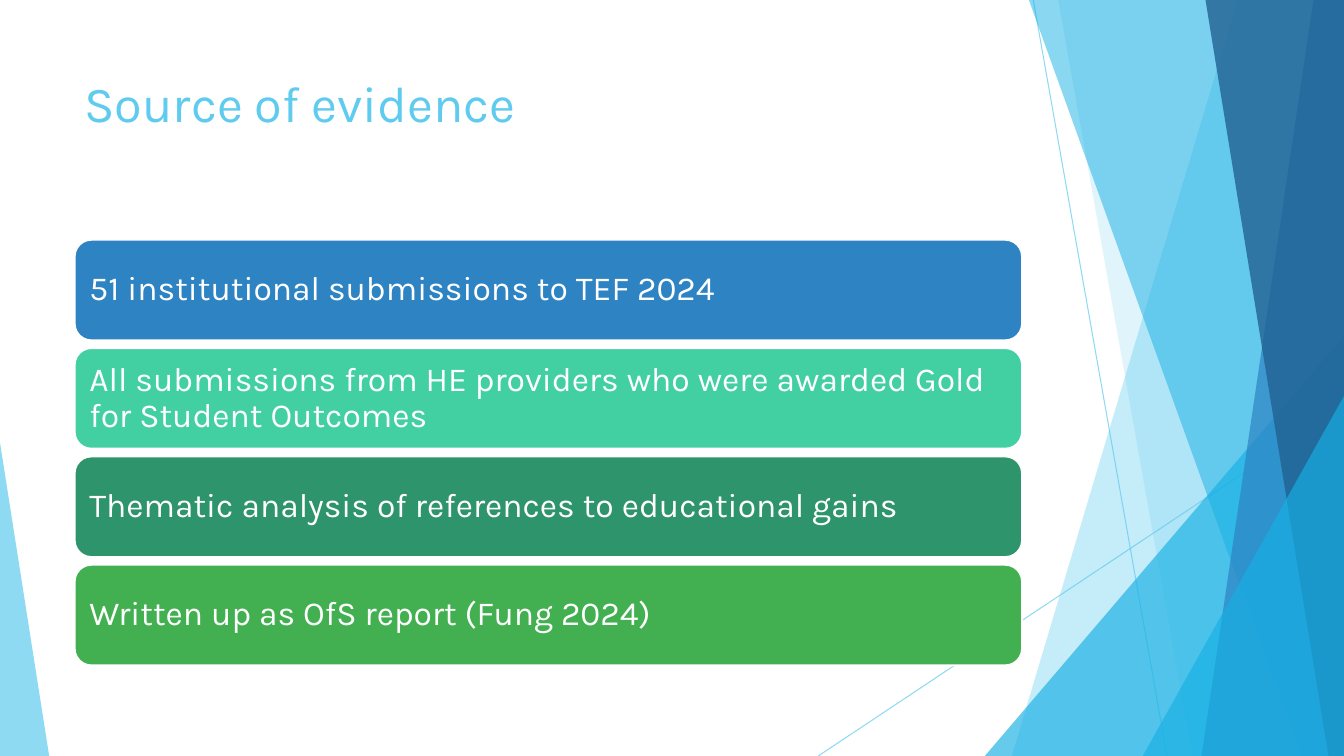
from lxml import etree
from pptx import Presentation
from pptx import util as u
from pptx.dml.color import RGBColor
from pptx.enum import shapes, text
from pptx.oxml.ns import qn

FONT = "Karla"
WHITE = RGBColor(0xFF, 0xFF, 0xFF)
SKY = RGBColor(0x5F, 0xCB, 0xEF)
CYAN = RGBColor(0x17, 0xB0, 0xE4)
BLUE = RGBColor(0x2E, 0x83, 0xC3)
NAVY = RGBColor(0x22, 0x62, 0x92)
MINT = RGBColor(0x42, 0xD0, 0xA2)
TEAL = RGBColor(0x2E, 0x94, 0x6B)
GREEN = RGBColor(0x42, 0xB0, 0x51)

SLIDE_WIDTH, SLIDE_HEIGHT = u.Cm(33.87), u.Cm(19.05)

EVIDENCE = [
    ("51 institutional submissions to TEF 2024", BLUE),
    ("All submissions from HE providers who were awarded Gold for Student Outcomes", MINT),
    ("Thematic analysis of references to educational gains", TEAL),
    ("Written up as OfS report (Fung 2024)", GREEN),
]


def set_opacity(color_parent, percent):
    color = next(color_parent.iter(qn("a:srgbClr")))
    etree.SubElement(color, qn("a:alpha"), val=str(percent * 1000))


def paint_facet(facet, color, opacity):
    facet.shadow.inherit = False
    facet.fill.solid()
    facet.fill.fore_color.rgb = color
    facet.line.fill.background()
    set_opacity(facet._element.spPr, opacity)


def add_thin_line(slide, x1, y1, x2, y2):
    thin = slide.shapes.add_connector(shapes.MSO_CONNECTOR.STRAIGHT, x1, y1, x2, y2)
    thin.line.color.rgb = SKY
    thin.line.width = u.Pt(0.75)
    set_opacity(thin._element.spPr, 70)
    etree.SubElement(thin._element.spPr, qn("a:effectLst"))


def add_band(slide, right, bottom, top_x, bottom_x, color, opacity):
    """Fill from a slanted left edge to the right side, over the full height."""
    outline = slide.shapes.build_freeform(top_x, 0, scale=1.0)
    outline.add_line_segments([(right, 0), (right, bottom), (bottom_x, bottom)], close=True)
    paint_facet(outline.convert_to_shape(), color, opacity)


def add_corner(slide, left, top, right, bottom, apex, color, opacity):
    """Triangle standing on the bottom edge, its apex at 0 (left) or 1 (right)."""
    corner = slide.shapes.add_shape(
        shapes.MSO_SHAPE.ISOSCELES_TRIANGLE, left, top, right - left, bottom - top)
    corner.adjustments[0] = apex
    paint_facet(corner, color, opacity)


def add_facets(slide, width, height):
    """Translucent facets along the right side and in the lower left corner."""
    add_thin_line(slide, u.Cm(26.04), 0, u.Cm(29.41), height)
    add_thin_line(slide, width, u.Cm(10.24), u.Cm(20.62), height)

    def band(top_x, bottom_x, color, opacity):
        add_band(slide, width, height, u.Cm(top_x), u.Cm(bottom_x), color, opacity)

    band(31.19, 25.5, SKY, 36)
    band(26.67, 30.05, SKY, 20)
    add_corner(slide, u.Cm(24.82), u.Cm(8.46), width, height, 1, CYAN, 66)
    band(25.93, 32.79, CYAN, 50)
    band(33.1, 30.28, BLUE, 70)
    band(30.38, 33.48, NAVY, 80)
    add_corner(slide, u.Cm(28.8), u.Cm(9.98), width, height, 1, CYAN, 66)
    add_corner(slide, 0, u.Cm(11.15), u.Cm(1.24), height, 0, SKY, 70)


def write(frame, words, size, color):
    frame.word_wrap = True
    line = frame.paragraphs[0]
    line.text = words
    line.alignment = text.PP_ALIGN.LEFT
    line.font.name = FONT
    line.font.size = u.Pt(size)
    line.font.color.rgb = color
    return line


def add_title(slide, left, top, width, height):
    title = slide.shapes.add_textbox(left, top, width, height)
    write(title.text_frame, "Source of evidence", 36, SKY)


def add_evidence_bars(slide, left, top, width, height, gap):
    """Stack one bar per source, sharing the height evenly."""
    bar_height = (height - gap * (len(EVIDENCE) - 1)) // len(EVIDENCE)
    for i, (words, color) in enumerate(EVIDENCE):
        bar = slide.shapes.add_shape(
            shapes.MSO_SHAPE.ROUNDED_RECTANGLE,
            left, top + i * (bar_height + gap), width, bar_height)
        bar.shadow.inherit = False
        bar.fill.solid()
        bar.fill.fore_color.rgb = color
        bar.line.color.rgb = WHITE
        bar.line.width = u.Pt(1.5)
        frame = bar.text_frame
        frame.vertical_anchor = text.MSO_ANCHOR.MIDDLE
        frame.margin_left = frame.margin_right = u.Cm(0.25)
        frame.margin_top = frame.margin_bottom = u.Cm(0.25)
        write(frame, words, 24, WHITE).line_spacing = 0.9


def main():
    deck = Presentation()
    deck.slide_width, deck.slide_height = SLIDE_WIDTH, SLIDE_HEIGHT
    slide = deck.slides.add_slide(deck.slide_layouts[6])
    add_facets(slide, SLIDE_WIDTH, SLIDE_HEIGHT)
    add_title(slide, u.Cm(1.88), u.Cm(1.7), u.Cm(23.88), u.Cm(3.66))
    add_evidence_bars(slide, u.Cm(1.88), u.Cm(6.04), u.Cm(23.88), u.Cm(10.73), u.Cm(0.19))
    deck.save("out.pptx")


if __name__ == "__main__":
    main()
